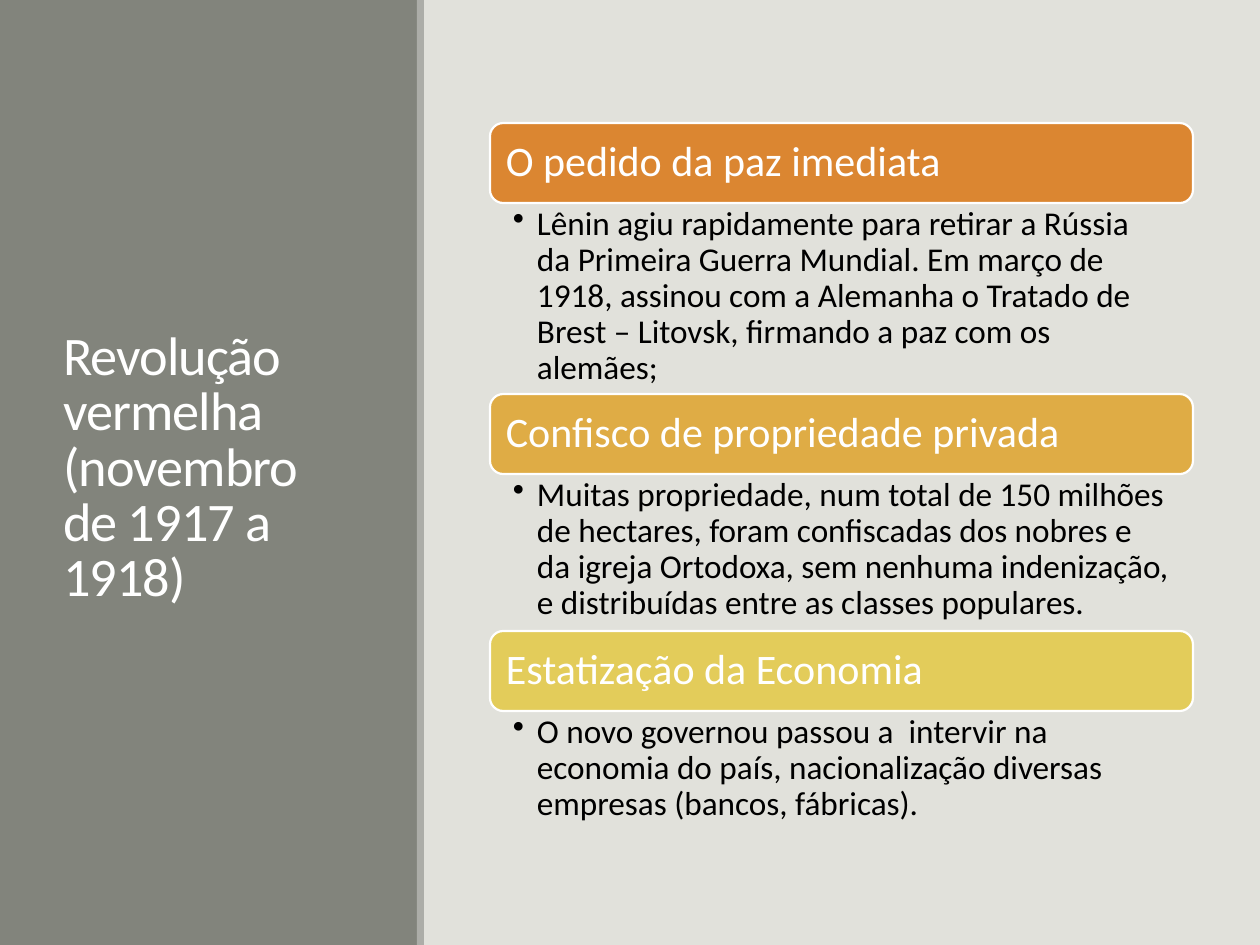
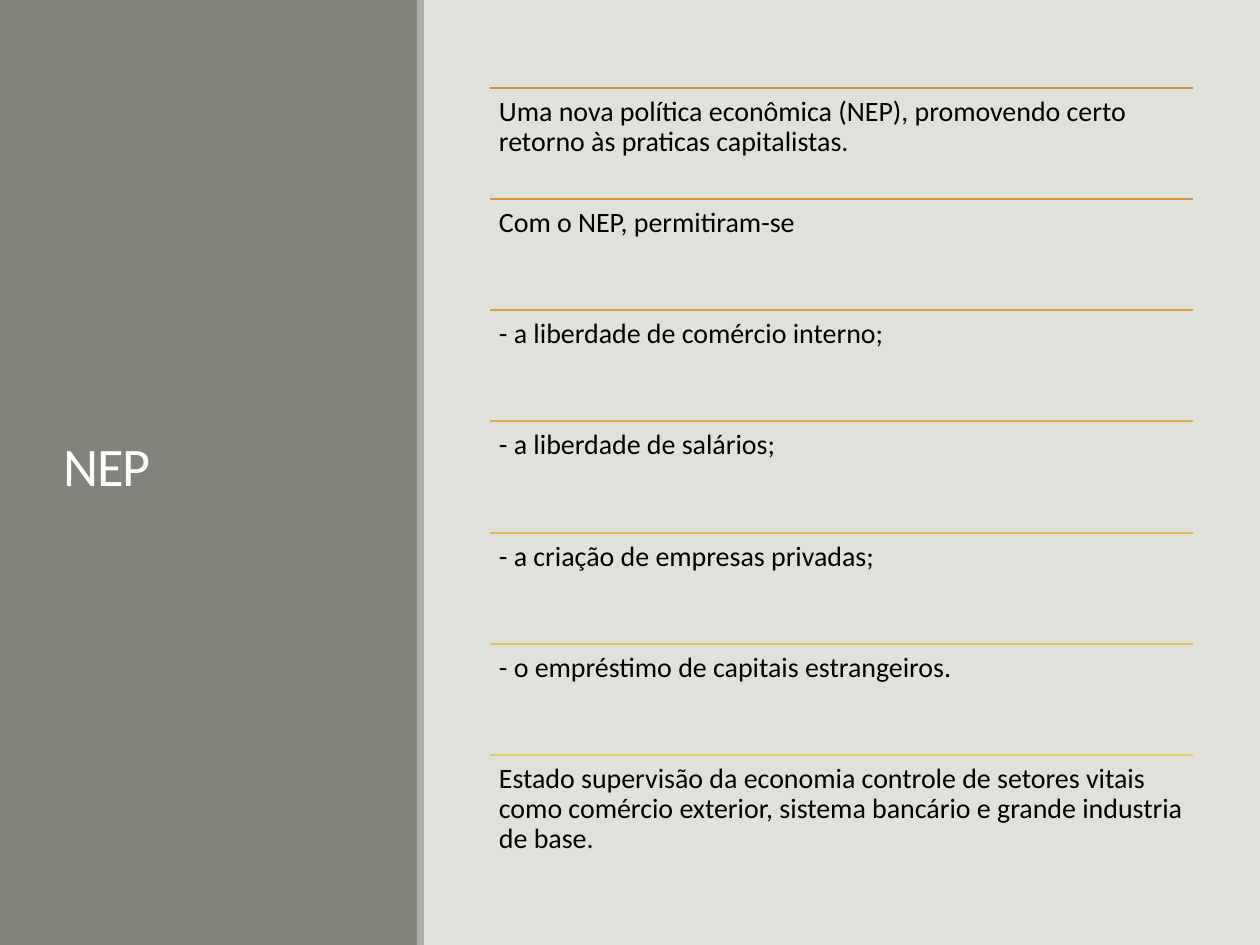
"""Build two slides on the Russian revolution and the NEP."""
from lxml import etree
from pptx import Presentation
from pptx import util as u
from pptx.dml.color import RGBColor
from pptx.enum import shapes, text
from pptx.oxml import ns

FONT = "Calibri"
COLORS = {"back": "E1E1DB", "panel": "82847C", "edge": "ACADA8",
          "white": "FFFFFF", "black": "000000",
          "orange": "DB8631", "amber": "DFAC45", "yellow": "E3CC5A"}
WIDE, HIGH = 1260, 945
LEFT, SPAN = 490, 703
HEAD = 80
TOPS = [123, 394, 631, 830]
FIRST, LAST = 88, 866

TOPICS = [
    ("O pedido da paz imediata", "orange",
     "Lênin agiu rapidamente para retirar a Rússia da Primeira Guerra Mundial. "
     "Em março de 1918, assinou com a Alemanha o Tratado de Brest – Litovsk, "
     "firmando a paz com os alemães;"),
    ("Confisco de propriedade privada", "amber",
     "Muitas propriedade, num total de 150 milhões de hectares, foram "
     "confiscadas dos nobres e da igreja Ortodoxa, sem nenhuma indenização, "
     "e distribuídas entre as classes populares."),
    ("Estatização da Economia", "yellow",
     "O novo governou passou a  intervir na economia do país, nacionalização "
     "diversas empresas (bancos, fábricas)."),
]
RULES = ["DB8631", "DC9338", "DEA03F", "DFAC45", "E0B74C", "E2C253", "E3CC5A"]
ROWS = [
    "Uma nova política econômica (NEP), promovendo certo retorno às praticas "
    "capitalistas.",
    "Com o NEP, permitiram-se",
    "- a liberdade de comércio interno;",
    "- a liberdade de salários;",
    "- a criação de empresas privadas;",
    "- o empréstimo de capitais estrangeiros.",
    "Estado supervisão da economia controle de setores vitais como comércio "
    "exterior, sistema bancário e grande industria de base.",
]


def px(num):
    """Turn pixels into EMU."""
    return u.Emu(round(num * 914400 / 126))


def rgb(code):
    """Turn a hex string into a colour."""
    return RGBColor.from_string(code)


def write(shape, words, size, color, pads, middle=False, lead=0.9):
    """Set and format the text of a shape and return its paragraph."""
    frame = shape.text_frame
    frame.text = words
    frame.word_wrap = True
    frame.margin_left, frame.margin_top, frame.margin_right, frame.margin_bottom = map(px, pads)
    anchor = text.MSO_ANCHOR
    frame.vertical_anchor = anchor.MIDDLE if middle else anchor.TOP
    para = frame.paragraphs[0]
    para.alignment = text.PP_ALIGN.LEFT
    para.line_spacing = lead
    font = para.runs[0].font
    font.name, font.size = FONT, u.Pt(size)
    font.color.rgb = rgb(COLORS[color])
    return para


def block(slide, box, color, kind=shapes.MSO_SHAPE.RECTANGLE):
    """Add a filled shape without outline."""
    shape = slide.shapes.add_shape(kind, *map(px, box))
    shape.shadow.inherit = False
    shape.fill.solid()
    shape.fill.fore_color.rgb = rgb(COLORS[color])
    shape.line.fill.background()
    return shape


def label(slide, box, words, size, color, pads, **opts):
    """Add a text box and return its paragraph."""
    shape = slide.shapes.add_textbox(*map(px, box))
    return write(shape, words, size, color, pads, **opts)


def bullet(para, indent):
    """Give a paragraph a hanging round bullet."""
    props = para._p.get_or_add_pPr()
    props.set("marL", str(px(indent)))
    props.set("indent", str(-px(indent)))
    etree.SubElement(props, ns.qn("a:buChar")).set("char", "•")


def rule(slide, top, code):
    """Draw a thin line across the content column."""
    line = slide.shapes.add_connector(
        shapes.MSO_CONNECTOR.STRAIGHT, px(LEFT), px(top), px(LEFT + SPAN), px(top))
    line.line.color.rgb = rgb(code)
    line.line.width = u.Pt(1.25)
    etree.SubElement(line._element.spPr, ns.qn("a:effectLst"))


def topic(slide, top, end, head, color, body):
    """Add a heading bar with a bullet text below it."""
    bar = block(slide, (LEFT, top, SPAN, HEAD), color,
                shapes.MSO_SHAPE.ROUNDED_RECTANGLE)
    bar.line.color.rgb = rgb(COLORS["white"])
    bar.line.width = u.Pt(1.25)
    write(bar, head, 24, "white", (12, 8, 12, 8), middle=True)
    low = top + HEAD
    para = label(slide, (LEFT, low, SPAN, end - low), body, 19, "black", (23, 4, 24, 4))
    bullet(para, 24)


def start(deck, title):
    """Add a slide with its side panel and title."""
    slide = deck.slides.add_slide(deck.slide_layouts[6])
    slide.background.fill.solid()
    slide.background.fill.fore_color.rgb = rgb(COLORS["back"])
    block(slide, (0, 0, 418, HIGH), "panel")
    block(slide, (417, 0, 7, HIGH), "edge")
    para = label(slide, (50, 72, 319, 795), title, 31, "white", (13, 6, 13, 6),
                 middle=True, lead=0.85)
    para.runs[0].font._element.set("spc", "-50")
    return slide


def main():
    """Build and save the deck."""
    deck = Presentation()
    deck.slide_width, deck.slide_height = px(WIDE), px(HIGH)

    slide = start(deck, "Revolução vermelha (novembro de 1917 a 1918)")
    for top, end, parts in zip(TOPS, TOPS[1:], TOPICS):
        topic(slide, top, end, *parts)

    slide = start(deck, "NEP")
    step = (LAST - FIRST) / len(ROWS)
    for num, (words, code) in enumerate(zip(ROWS, RULES)):
        top = round(FIRST + num * step)
        rule(slide, top, code)
        label(slide, (LEFT, top, SPAN, round(step)), words, 16, "black", (9, 9, 9, 9))

    deck.save("out.pptx")


if __name__ == "__main__":
    main()
